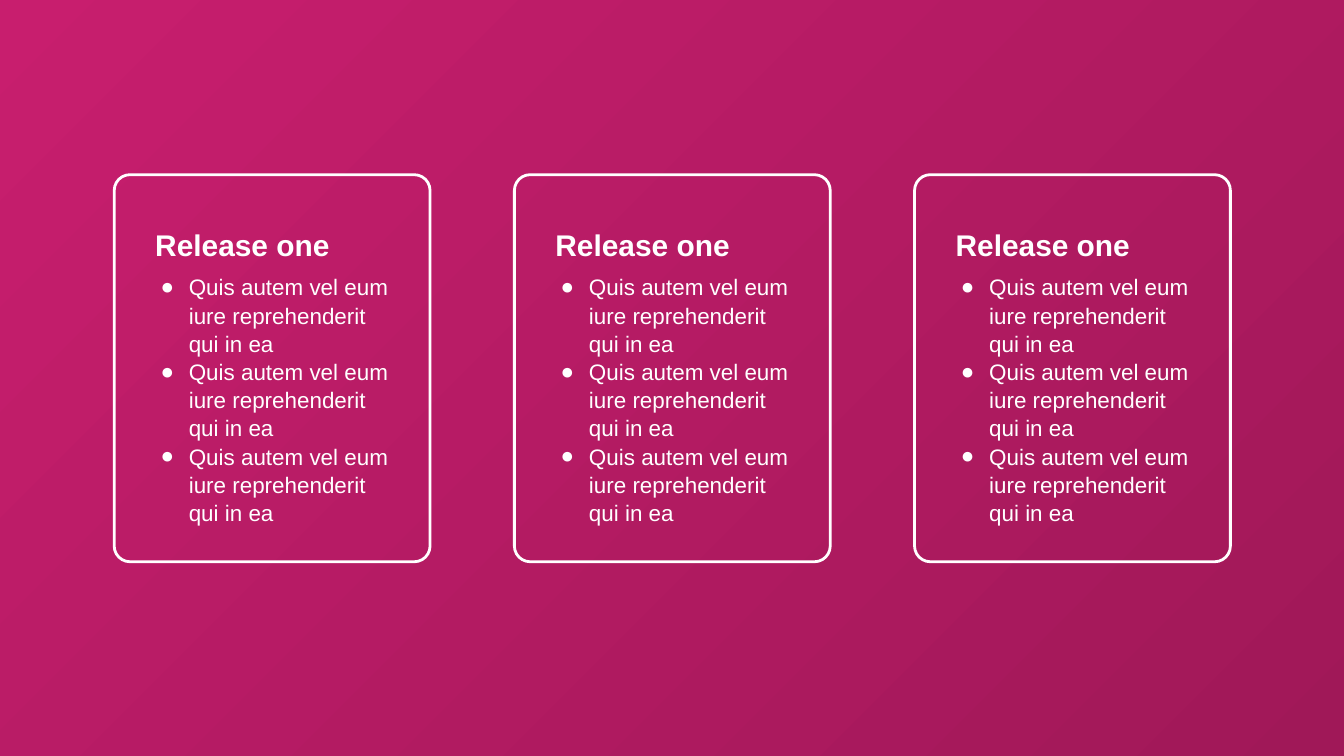
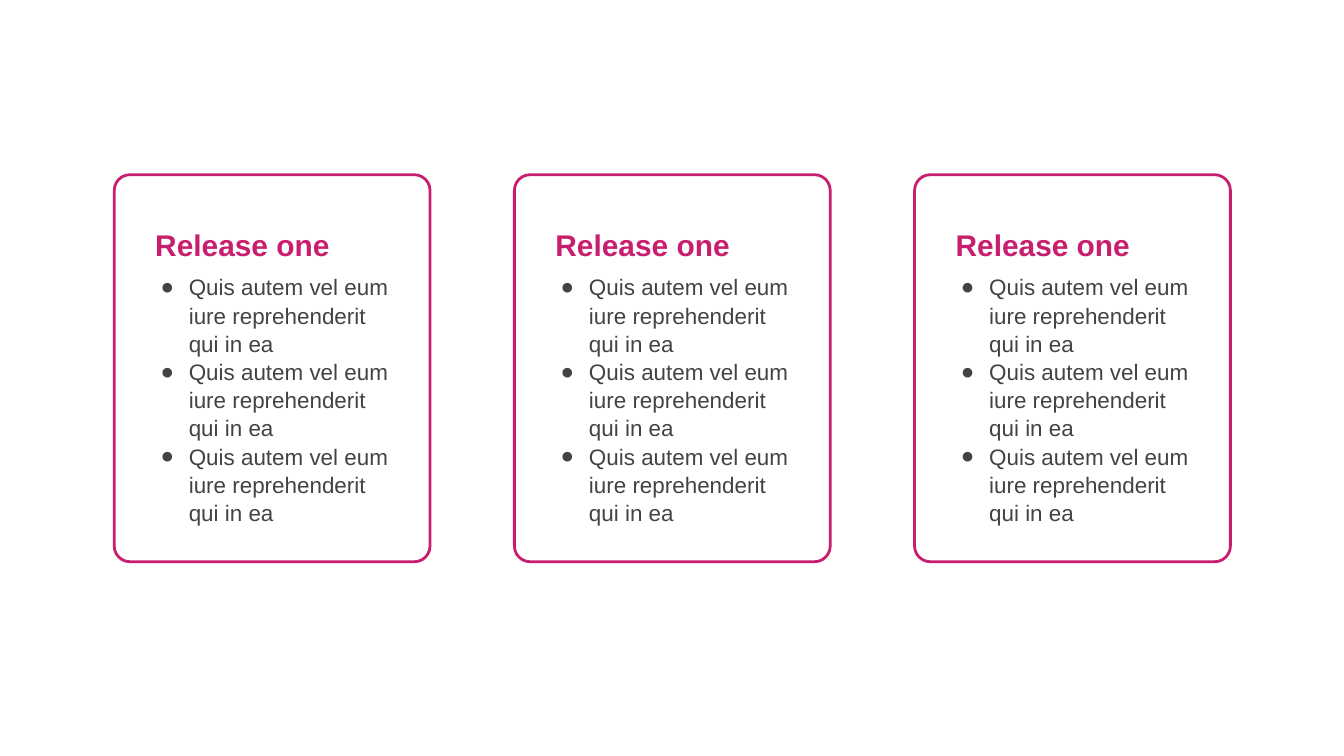
from lxml import etree
from pptx import Presentation
from pptx.dml.color import RGBColor
from pptx.enum.shapes import MSO_SHAPE
from pptx.oxml.ns import qn
from pptx.util import Inches, Pt

RECT = MSO_SHAPE.RECTANGLE
ROUND = MSO_SHAPE.ROUNDED_RECTANGLE

ITEM = "Quis autem vel eum iure reprehenderit qui in ea"
CARDS = [("Release one", [ITEM] * 3)] * 3
COLORS = {
    "pink": "C81E6E",
    "wine": "A01858",
    "white": "FFFFFF",
    "dark": "434343",
    "edge": "595959",
}
THEMES = [
    {"shade": True, "head": "white", "body": "white", "deep": 3.43},
    {"shade": False, "head": "pink", "body": "dark", "deep": 4},
]
FONT = "Arial"
WIDE, HIGH = 20, 11.25
LEFT, TOP, CARD_W, CARD_H = 1.7, 2.6, 4.7, 5.76
SPAN = 11.91
INSET = 0.2


def rgb(name):
    return RGBColor.from_string(COLORS[name])


def add_text(shapes, lines, box, size, color, bold=False, bullet=False):
    frame = shapes.add_textbox(*map(Inches, box)).text_frame
    frame.word_wrap = True
    frame.margin_left = frame.margin_right = Inches(INSET)
    frame.margin_top = frame.margin_bottom = Inches(INSET)
    for i, line in enumerate(lines):
        para = frame.add_paragraph() if i else frame.paragraphs[0]
        para.line_spacing = 1.05
        run = para.add_run()
        run.text = line
        font = run.font
        font.name, font.size, font.bold = FONT, Pt(size), bold
        font.color.rgb = rgb(color)
        if bullet:
            add_bullet(para, color)


def add_bullet(para, color):
    props = para._p.get_or_add_pPr()
    props.set("marL", str(Inches(0.5)))
    props.set("indent", str(Inches(-0.42)))
    tint = etree.SubElement(props, qn("a:buClr"))
    etree.SubElement(tint, qn("a:srgbClr"), val=COLORS[color])
    etree.SubElement(props, qn("a:buFont"), typeface=FONT)
    etree.SubElement(props, qn("a:buChar"), char="●")


def add_shade(shapes):
    back = shapes.add_shape(RECT, *map(Inches, (-0.1, -0.05, 20.1, 11.38)))
    back.shadow.inherit = False
    back.line.color.rgb = rgb("edge")
    back.line.width = Pt(0.75)
    back.fill.gradient()
    for stop, name in zip(back.fill.gradient_stops, ("wine", "pink")):
        stop.color.rgb = rgb(name)
    grad = back._element.spPr.find(qn("a:gradFill"))
    line = grad.find(qn("a:lin"))
    glow = etree.Element(qn("a:path"), {"path": "circle"})
    etree.SubElement(glow, qn("a:fillToRect"), l="100000", t="100000")
    grad.replace(line, glow)


def add_card(slide, left, head, items, theme):
    shapes = slide.shapes.add_group_shape().shapes
    frame = shapes.add_shape(ROUND, *map(Inches, (left, TOP, CARD_W, CARD_H)))
    frame.adjustments[0] = 0.05
    frame.shadow.inherit = False
    frame.fill.background()
    frame.line.color.rgb = rgb(theme["head"])
    frame.line.width = Pt(3)
    x = left + 0.41
    add_text(shapes, [head], (x, TOP + 0.54, 3.58, 0.79),
             size=32, color=theme["head"], bold=True)
    add_text(shapes, items, (x, TOP + 1.25, 3.9, theme["deep"]),
             size=24, color=theme["body"], bullet=True)


def main():
    deck = Presentation()
    deck.slide_width, deck.slide_height = Inches(WIDE), Inches(HIGH)
    step = SPAN / (len(CARDS) - 1)
    for theme in THEMES:
        slide = deck.slides.add_slide(deck.slide_layouts[6])
        if theme["shade"]:
            add_shade(slide.shapes)
        for i, (head, items) in enumerate(CARDS):
            add_card(slide, LEFT + i * step, head, items, theme)
    deck.save("out.pptx")


if __name__ == "__main__":
    main()
